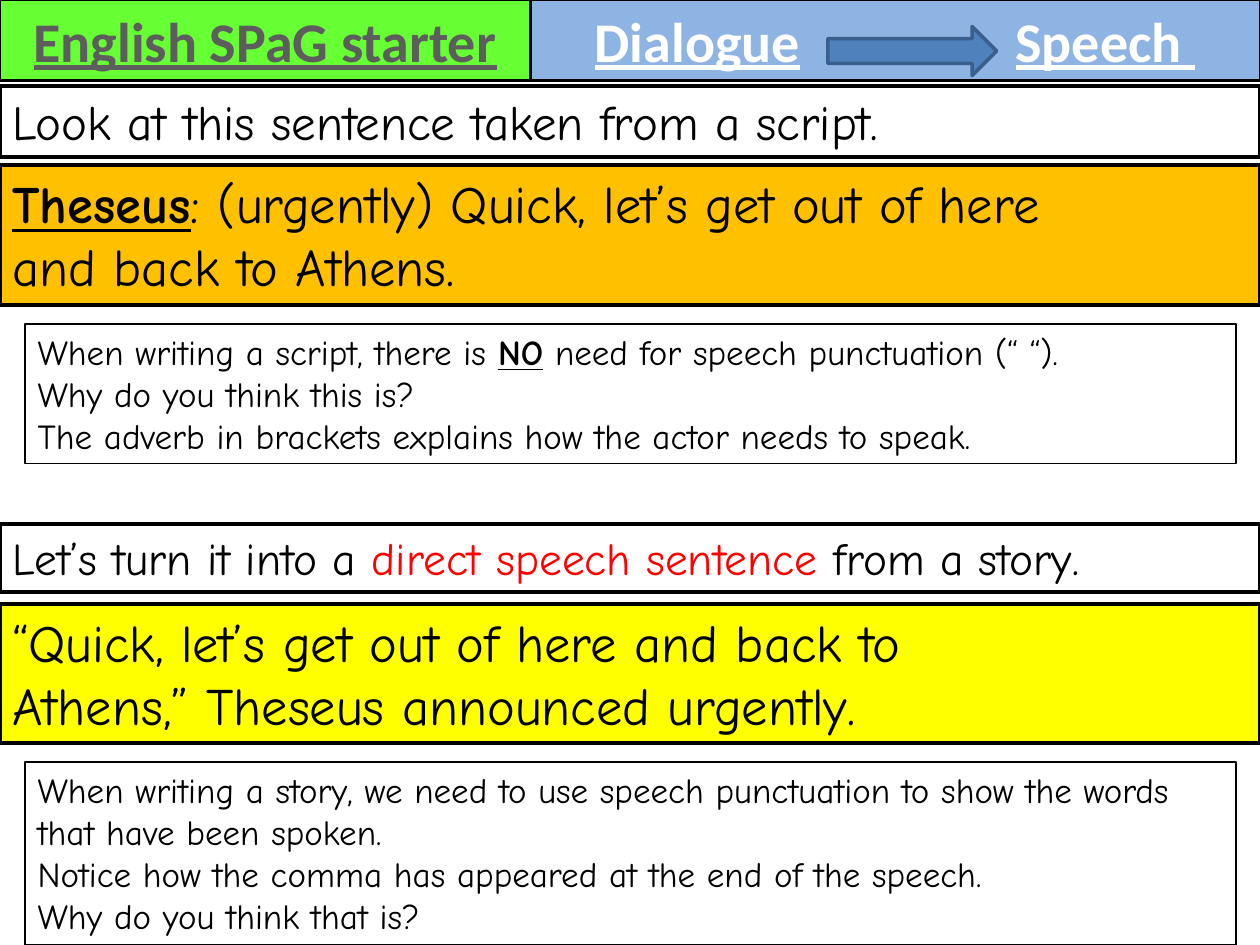
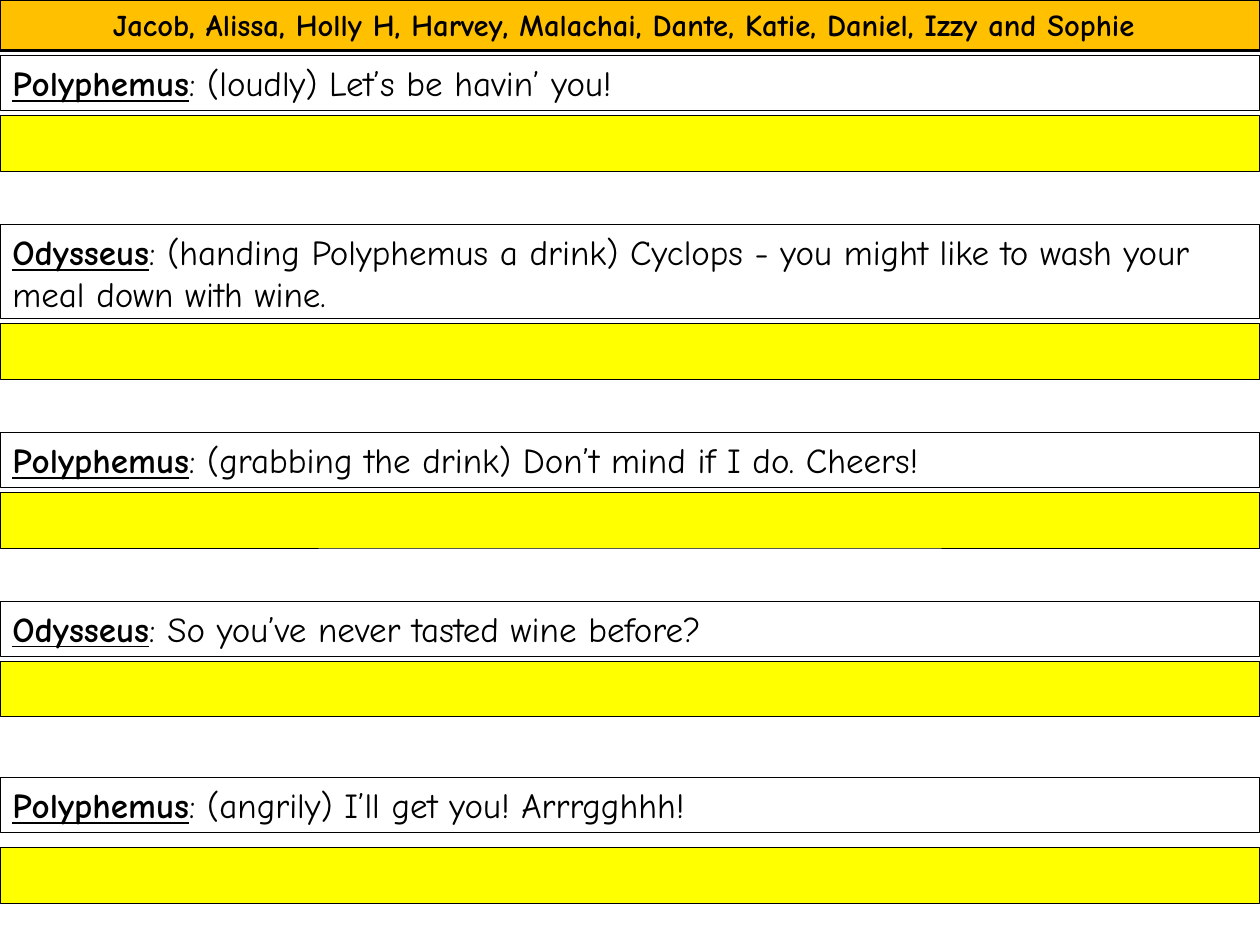
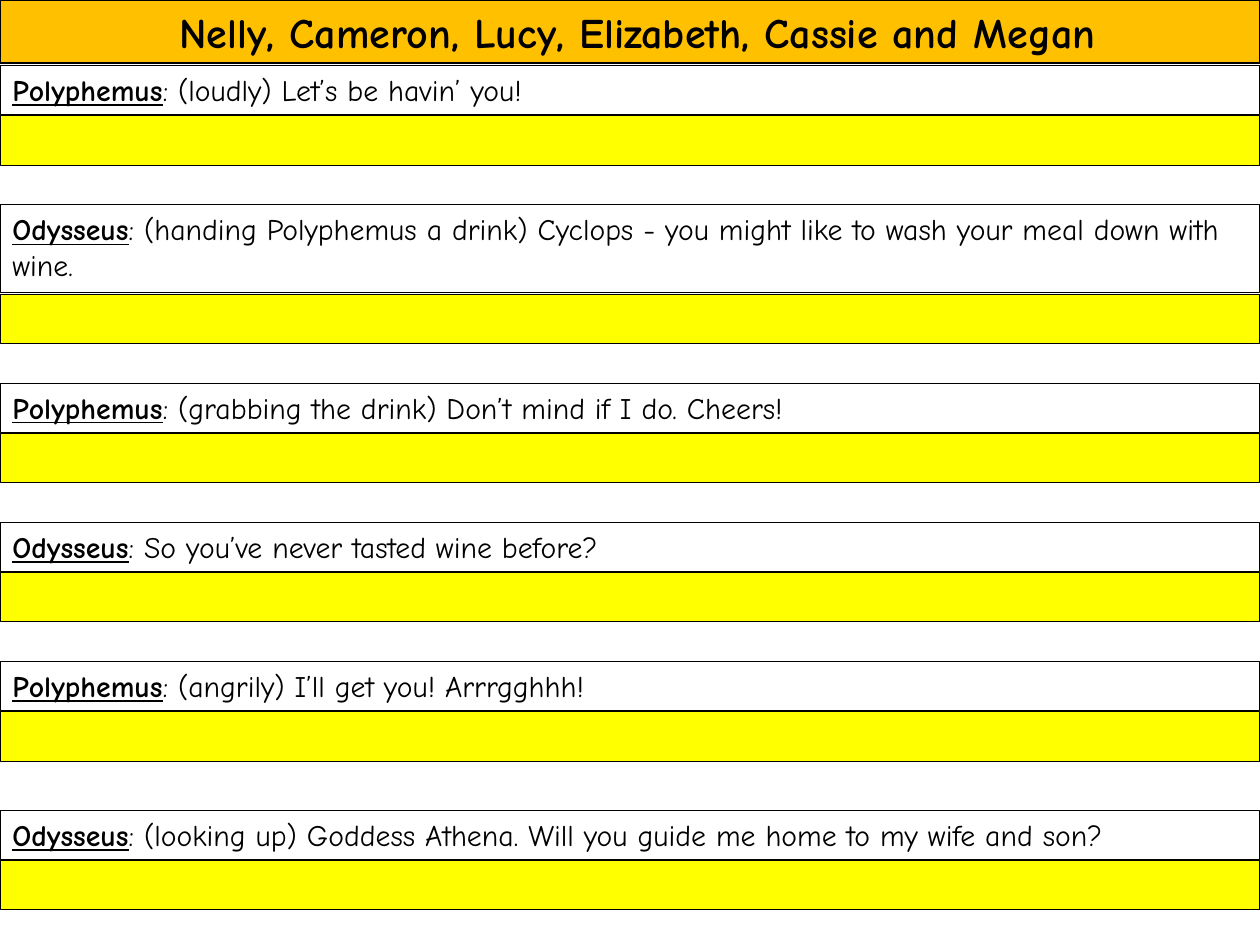
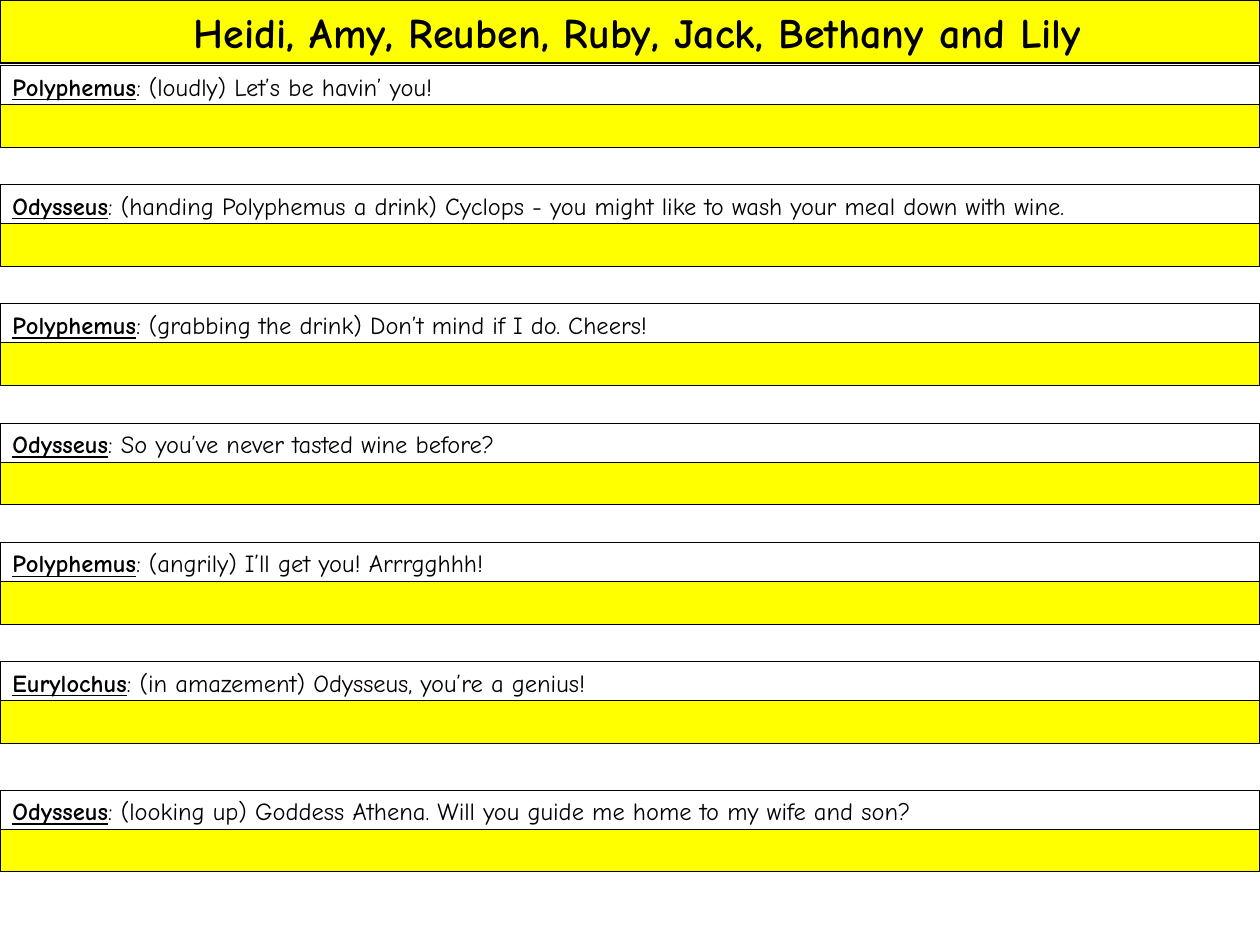
from pptx import Presentation
from pptx.dml.color import RGBColor
from pptx.enum.shapes import MSO_SHAPE
from pptx.enum.text import MSO_ANCHOR, MSO_AUTO_SIZE, PP_ALIGN
from pptx.oxml.ns import qn
from pptx.util import Inches, Pt
from lxml import etree

BLACK, WHITE, RED = "000000", "FFFFFF", "FF0000"
GREEN, SKY, ORANGE, YELLOW = "66FF33", "8EB4E3", "FFC000", "FFFF00"
GREY, BLUE, NAVY = "5D5D5D", "4F81BD", "3A5F8C"
HAND, TITLE = "Comic Neue", "Calibri"
WIDTH = 10
WRAP = 0.31

LOUDLY = ("Polyphemus", "(loudly) Let’s be havin’ you!")
DRINK = ("Odysseus", "(handing Polyphemus a drink) Cyclops - you might like "
         "to wash your meal down with wine.")
CHEERS = ("Polyphemus", "(grabbing the drink) Don’t mind if I do. Cheers!")
TASTED = ("Odysseus", "So you’ve never tasted wine before?")
ANGRILY = ("Polyphemus", "(angrily) I’ll get you! Arrrgghhh!")
GENIUS = ("Eurylochus", "(in amazement) Odysseus, you’re a genius!")
GODDESS = ("Odysseus", "(looking up) Goddess Athena. Will you guide me home "
           "to my wife and son?")


def rgb(value):
    """Turn a hex string into a colour."""
    return RGBColor.from_string(value)


def add_shape(s, kind, at, fill, line, weight):
    """Add a flat preset shape with the given fill and outline."""
    sp = s.shapes.add_shape(kind, *(Inches(v) for v in at))
    sp.shadow.inherit = False
    if fill:
        sp.fill.solid()
        sp.fill.fore_color.rgb = rgb(fill)
    else:
        sp.fill.background()
    sp.line.color.rgb = rgb(line)
    sp.line.width = Pt(weight)
    return sp


def add_run(p, text, size, font=HAND, color=BLACK, bold=False, underline=False):
    """Append one formatted run to a paragraph."""
    r = p.add_run()
    r.text = text
    r.font.size = Pt(size)
    r.font.name = font
    r.font.color.rgb = rgb(color)
    r.font.bold = bold
    r.font.underline = underline


def add_box(s, at, paragraphs=(), size=20, fill=None, weight=0.5,
            align=PP_ALIGN.LEFT):
    """Add a ruled box; a paragraph lists (text, run options), None breaks a line."""
    sp = add_shape(s, MSO_SHAPE.RECTANGLE, at, fill, BLACK, weight)
    tf = sp.text_frame
    tf.word_wrap = True
    tf.vertical_anchor = MSO_ANCHOR.TOP
    if paragraphs:
        tf.auto_size = MSO_AUTO_SIZE.SHAPE_TO_FIT_TEXT
    for i, runs in enumerate(paragraphs):
        p = tf.add_paragraph() if i else tf.paragraphs[0]
        p.alignment = align
        for run in runs:
            if run is None:
                p.add_line_break()
            else:
                add_run(p, run[0], size, **run[1])
    return sp


def add_tab_stop(p, position):
    """Give a paragraph one left tab stop."""
    tabs = etree.SubElement(p._p.get_or_add_pPr(), qn("a:tabLst"))
    etree.SubElement(tabs, qn("a:tab"), pos=str(Inches(position)), algn="l")


def plain(text):
    """Return a paragraph of one plain run."""
    return [(text, {})]


def spoken(speaker, words):
    """Return a script line with its speaker emphasised."""
    return [(speaker, {"bold": True, "underline": True}), (": " + words, {})]


def new_slide(prs):
    """Add a blank slide."""
    return prs.slides.add_slide(prs.slide_layouts[6])


def add_lesson_titles(s):
    """Add the two title bands and the arrow between the topics."""
    split, height = 4.21, 0.64
    style = {"font": TITLE, "bold": True, "underline": True}
    add_box(s, (0, 0, split, height),
            [[("English SPaG starter", {**style, "color": GREY})]],
            32, GREEN, 1.5, PP_ALIGN.CENTER)
    topics = add_box(s, (split, 0, WIDTH - split, height),
                     [[("Dialogue\tSpeech ", {**style, "color": WHITE})]],
                     32, SKY, 1.5)
    topics.text_frame.margin_left = Inches(0.51)
    add_tab_stop(topics.text_frame.paragraphs[0], 3.34)
    add_shape(s, MSO_SHAPE.RIGHT_ARROW, (6.57, 0.21, 1.34, 0.39), BLUE, NAVY, 2)


def lesson_slide(prs):
    """Build the slide that turns a script line into direct speech."""
    s = new_slide(prs)
    add_lesson_titles(s)
    add_box(s, (0, 0.68, WIDTH, 0.57),
            [plain("Look at this sentence taken from a script.")], 28, weight=2.25)
    add_box(s, (0, 1.31, WIDTH, 1.11),
            [spoken("Theseus", "(urgently) Quick, let’s get out of here ")
             + [None] + plain("and back to Athens.")], 30, ORANGE, 2.25)
    add_box(s, (0.2, 2.57, 9.61, 1.11),
            [[("When writing a script, there is ", {}),
              ("NO", {"bold": True, "underline": True}),
              (" need for speech punctuation (“ “).", {})],
             plain("Why do you think this is?"),
             plain("The adverb in brackets explains how the actor needs to speak.")],
            weight=1)
    add_box(s, (0, 4.16, WIDTH, 0.54),
            [[("Let’s turn it into a ", {}),
              ("direct speech sentence ", {"color": RED}),
              ("from a story.", {})]], 26, weight=2.25)
    add_box(s, (0, 4.79, WIDTH, 1.11),
            [plain("“Quick, let’s get out of here and back to ") + [None]
             + plain("Athens,” Theseus announced urgently.")], 30, YELLOW, 2.25)
    add_box(s, (0.2, 6.05, 9.61, 1.45),
            [plain("When writing a story, we need to use speech punctuation to "
                   "show the words that have been spoken."),
             plain("Notice how the comma has appeared at the end of the speech."),
             plain("Why do you think that is?")], weight=1)


def group_slide(prs, names, name_size, band, band_height, lines, size, height,
                first, regular_end, final, drop, final_drop, wrapped=()):
    """Build a group's worksheet: script lines, each with an answer box below."""
    s = new_slide(prs)
    add_box(s, (0, 0, WIDTH, band_height), [[(names, {"bold": True})]],
            name_size, band, 1.5, PP_ALIGN.CENTER)
    pitch = (regular_end - first - WRAP * len(wrapped)) / (len(lines) - 2)
    top = first
    for i, line in enumerate(lines):
        last = i == len(lines) - 1
        extra = WRAP if line in wrapped else 0
        if last:
            top = final
        add_box(s, (0, top, WIDTH, height + extra), [spoken(*line)], size)
        answer = top + extra + (final_drop if last else drop)
        add_box(s, (0, answer, WIDTH, height), fill=YELLOW)
        top += pitch + extra


def main():
    """Build and save the presentation."""
    prs = Presentation()
    prs.slide_width, prs.slide_height = Inches(WIDTH), Inches(7.5)
    lesson_slide(prs)
    group_slide(prs, "Jacob, Alissa, Holly H, Harvey, Malachai, Dante, Katie, "
                "Daniel, Izzy and Sophie ", 17.5, ORANGE, 0.4,
                [LOUDLY, DRINK, CHEERS, TASTED, ANGRILY], size=20, height=0.44,
                first=0.44, regular_end=4.77, final=6.17,
                drop=0.48, final_drop=0.56, wrapped=[DRINK])
    group_slide(prs, " Nelly, Cameron, Lucy, Elizabeth, Cassie and Megan",
                24, ORANGE, 0.5,
                [LOUDLY, DRINK, CHEERS, TASTED, ANGRILY, GODDESS],
                size=17, height=0.39, first=0.52, regular_end=5.25, final=6.43,
                drop=0.4, final_drop=0.4, wrapped=[DRINK])
    group_slide(prs, " Heidi, Amy, Reuben, Ruby, Jack, Bethany and Lily",
                24, YELLOW, 0.5,
                [LOUDLY, DRINK, CHEERS, TASTED, ANGRILY, GENIUS, GODDESS],
                size=14, height=0.34, first=0.52, regular_end=5.25, final=6.27,
                drop=0.31, final_drop=0.31)
    prs.save("out.pptx")


if __name__ == "__main__":
    main()
